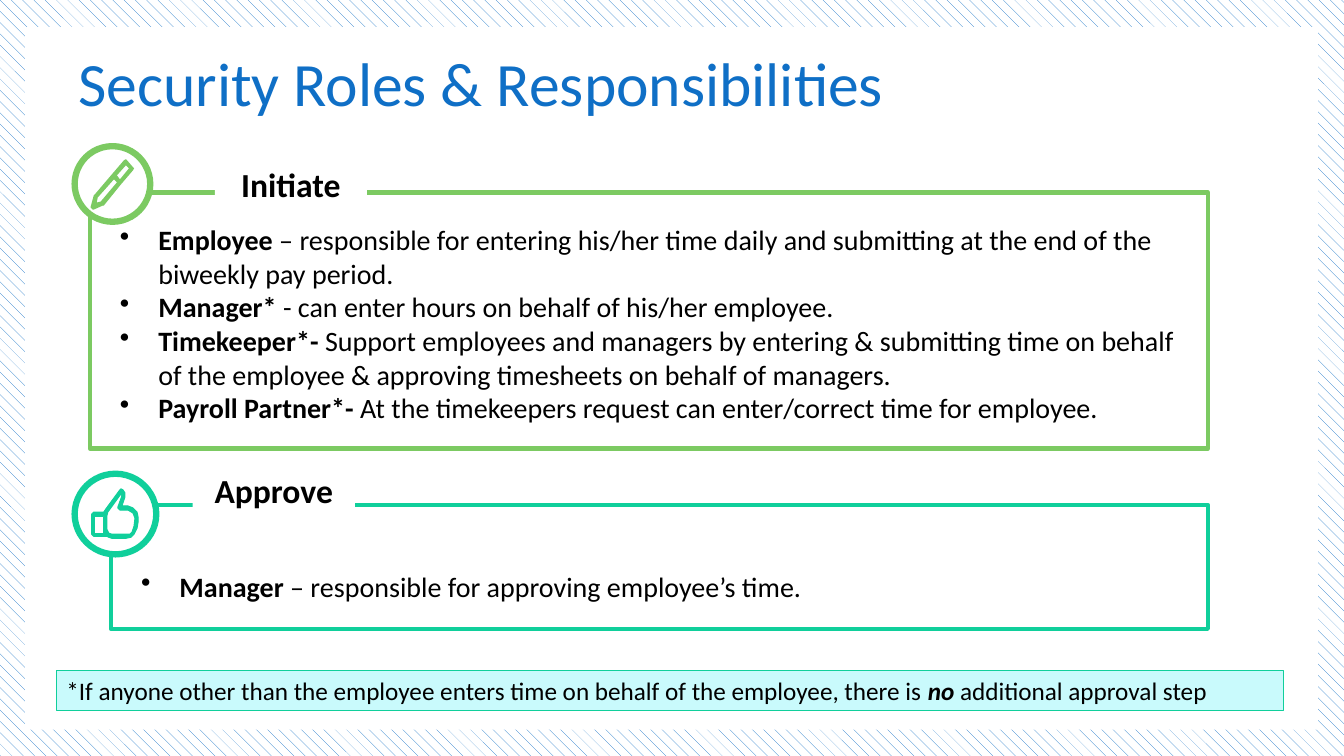
from dataclasses import dataclass
from typing import Any

import lxml.etree
import pptx
import pptx.dml.color
import pptx.enum.dml
import pptx.enum.shapes
import pptx.enum.text
import pptx.oxml.ns
import pptx.util

Inches = pptx.util.Inches
Pt = pptx.util.Pt
MSO_SHAPE = pptx.enum.shapes.MSO_SHAPE
MSO_ANCHOR = pptx.enum.text.MSO_ANCHOR
PP_ALIGN = pptx.enum.text.PP_ALIGN

Contour = list[tuple[int, int]]


@dataclass(frozen=True)
class Theme:
    font: str = "Calibri"
    blue: str = "0F6FC6"
    green: str = "7CCA62"
    teal: str = "10CF9B"
    pale: str = "C9FAFC"
    white: str = "FFFFFF"
    black: str = "000000"
    title_size: int = 44
    label_size: int = 24
    body_size: int = 20
    note_size: int = 18


THEME = Theme()


@dataclass(frozen=True)
class Box:
    left: float
    top: float
    width: float
    height: float

    def lengths(self) -> list[int]:
        return [Inches(value) for value in (self.left, self.top, self.width, self.height)]


@dataclass(frozen=True)
class Run:
    text: str
    bold: bool = False
    italic: bool = False


@dataclass(frozen=True)
class Section:
    label: str
    color: str
    frame: Box
    label_box: Box
    badge: Box
    icon: list[Contour]
    icon_line: float
    top_inset: float
    roles: list[tuple[str, str]]


PEN = [
    [(132, 166), (126, 159), (125, 158), (123, 159), (111, 173), (94, 193), (93, 194),
     (90, 205), (90, 206), (91, 207), (92, 208), (93, 208), (102, 204), (103, 204),
     (120, 183), (132, 169), (133, 167)],
    [(100, 200), (96, 201), (97, 196), (113, 178), (116, 181)],
    [(119, 178), (116, 174), (125, 164), (128, 167)],
]
THUMB = [
    [(137, 513), (136, 508), (132, 504), (127, 502), (121, 502), (124, 493), (124, 489),
     (122, 486), (120, 485), (119, 486), (105, 505), (103, 508), (93, 508), (91, 510),
     (91, 530), (93, 532), (106, 532), (108, 533), (111, 534), (125, 534), (130, 533),
     (133, 530), (136, 524), (137, 518)],
    [(94, 512), (103, 512), (103, 529), (94, 529)],
    [(131, 528), (129, 530), (125, 530), (111, 530), (108, 529), (106, 525), (106, 512),
     (107, 508), (120, 490), (121, 492), (117, 503), (117, 504), (119, 506), (127, 506),
     (132, 509), (134, 514), (133, 522)],
]

SECTIONS = [
    Section(
        "Approve", THEME.teal, Box(1.1, 5.01, 10.88, 1.23), Box(1.91, 4.61, 1.61, 0.5),
        Box(0.74, 4.7, 0.81, 0.8), THUMB, 0.75, 0.64,
        [("Manager", " – responsible for approving employee’s time.")],
    ),
    Section(
        "Initiate", THEME.green, Box(0.89, 1.91, 11.09, 2.54), Box(2.13, 1.58, 1.51, 0.5),
        Box(0.74, 1.45, 0.75, 0.75), PEN, 0, 0.3,
        [
            ("Employee", " – responsible for entering his/her time daily and submitting "
             "at the end of the biweekly pay period."),
            ("Manager* ", "- can enter hours on behalf of his/her employee."),
            ("Timekeeper*- ", "Support employees and managers by entering & submitting time "
             "on behalf of the employee & approving timesheets on behalf of managers."),
            ("Payroll Partner*- ", "At the timekeepers request can enter/correct time "
             "for employee."),
        ],
    ),
]


def rgb(color: str) -> Any:
    return pptx.dml.color.RGBColor.from_string(color)


def style_shape(shape: Any, fill: str = "", line: str = "", width: float = 0) -> None:
    shape.shadow.inherit = False
    if fill:
        shape.fill.solid()
        shape.fill.fore_color.rgb = rgb(fill)
    else:
        shape.fill.background()
    if line and width:
        shape.line.color.rgb = rgb(line)
        shape.line.width = Pt(width)
    else:
        shape.line.fill.background()


def add_panel(shapes: Any, kind: Any, box: Box, fill: str = "", line: str = "",
              width: float = 0) -> Any:
    shape = shapes.add_shape(kind, *box.lengths())
    style_shape(shape, fill, line, width)
    return shape


def add_bullet(paragraph: Any) -> None:
    properties = paragraph._p.get_or_add_pPr()
    properties.set("marL", str(Inches(0.38)))
    properties.set("indent", str(-Inches(0.38)))
    lxml.etree.SubElement(properties, pptx.oxml.ns.qn("a:buChar"), char="•")


def write_text(shape: Any, paragraphs: list[list[Run]], size: int, color: str = THEME.black,
               align: Any = PP_ALIGN.LEFT, anchor: Any = MSO_ANCHOR.TOP,
               bulleted: bool = False) -> None:
    frame = shape.text_frame
    frame.word_wrap = True
    frame.vertical_anchor = anchor
    for index, runs in enumerate(paragraphs):
        paragraph = frame.add_paragraph() if index else frame.paragraphs[0]
        paragraph.alignment = align
        if bulleted:
            add_bullet(paragraph)
        paragraph.font.name = THEME.font
        paragraph.font.size = Pt(size)
        paragraph.font.color.rgb = rgb(color)
        for item in runs:
            run = paragraph.add_run()
            run.text = item.text
            run.font.bold = item.bold
            run.font.italic = item.italic


def add_icon(shapes: Any, contours: list[Contour], color: str, line_width: float) -> None:
    first, *others = contours
    builder = shapes.build_freeform(*first[0], scale=Inches(0.01))
    builder.add_line_segments(first[1:], close=True)
    for contour in others:
        builder.move_to(*contour[0])
        builder.add_line_segments(contour[1:], close=True)
    style_shape(builder.convert_to_shape(), color, color, line_width)


def add_section(slide: Any, section: Section) -> None:
    frame = add_panel(slide.shapes, MSO_SHAPE.RECTANGLE, section.frame,
                      line=section.color, width=3)
    text_frame = frame.text_frame
    text_frame.margin_left = text_frame.margin_right = text_frame.margin_bottom = Inches(0.3)
    text_frame.margin_top = Inches(section.top_inset)
    roles = [[Run(role, bold=True), Run(duty)] for role, duty in section.roles]
    write_text(frame, roles, THEME.body_size, bulleted=True)

    label = add_panel(slide.shapes, MSO_SHAPE.RECTANGLE, section.label_box, THEME.white)
    write_text(label, [[Run(section.label, bold=True)]], THEME.label_size,
               align=PP_ALIGN.CENTER)

    badge = slide.shapes.add_group_shape()
    add_panel(badge.shapes, MSO_SHAPE.OVAL, section.badge, THEME.white, section.color, 4.5)
    add_icon(badge.shapes, section.icon, section.color, section.icon_line)


def main() -> None:
    presentation = pptx.Presentation()
    presentation.slide_width = Inches(13.33)
    presentation.slide_height = Inches(7.5)
    slide = presentation.slides.add_slide(presentation.slide_layouts[6])

    background = slide.background.fill
    background.patterned()
    background.pattern = pptx.enum.dml.MSO_PATTERN.SHINGLE
    background.fore_color.rgb = rgb(THEME.blue)
    background.back_color.rgb = rgb(THEME.white)
    add_panel(slide.shapes, MSO_SHAPE.RECTANGLE, Box(0.25, 0.27, 12.82, 6.97), THEME.white)

    for section in SECTIONS:
        add_section(slide, section)

    note = add_panel(slide.shapes, MSO_SHAPE.RECTANGLE, Box(0.56, 6.65, 12.17, 0.4),
                     THEME.pale, THEME.teal, 0.75)
    write_text(note, [[
        Run("*If anyone other than the employee enters time on behalf of the employee, there is "),
        Run("no", bold=True, italic=True),
        Run(" additional approval step"),
    ]], THEME.note_size)

    title = slide.shapes.add_textbox(*Box(0.68, 0.38, 9.75, 0.95).lengths())
    write_text(title, [[Run("Security Roles & Responsibilities")]], THEME.title_size,
               THEME.blue, anchor=MSO_ANCHOR.MIDDLE)
    title.text_frame.paragraphs[0].line_spacing = 0.9

    presentation.save("out.pptx")


if __name__ == "__main__":
    main()
